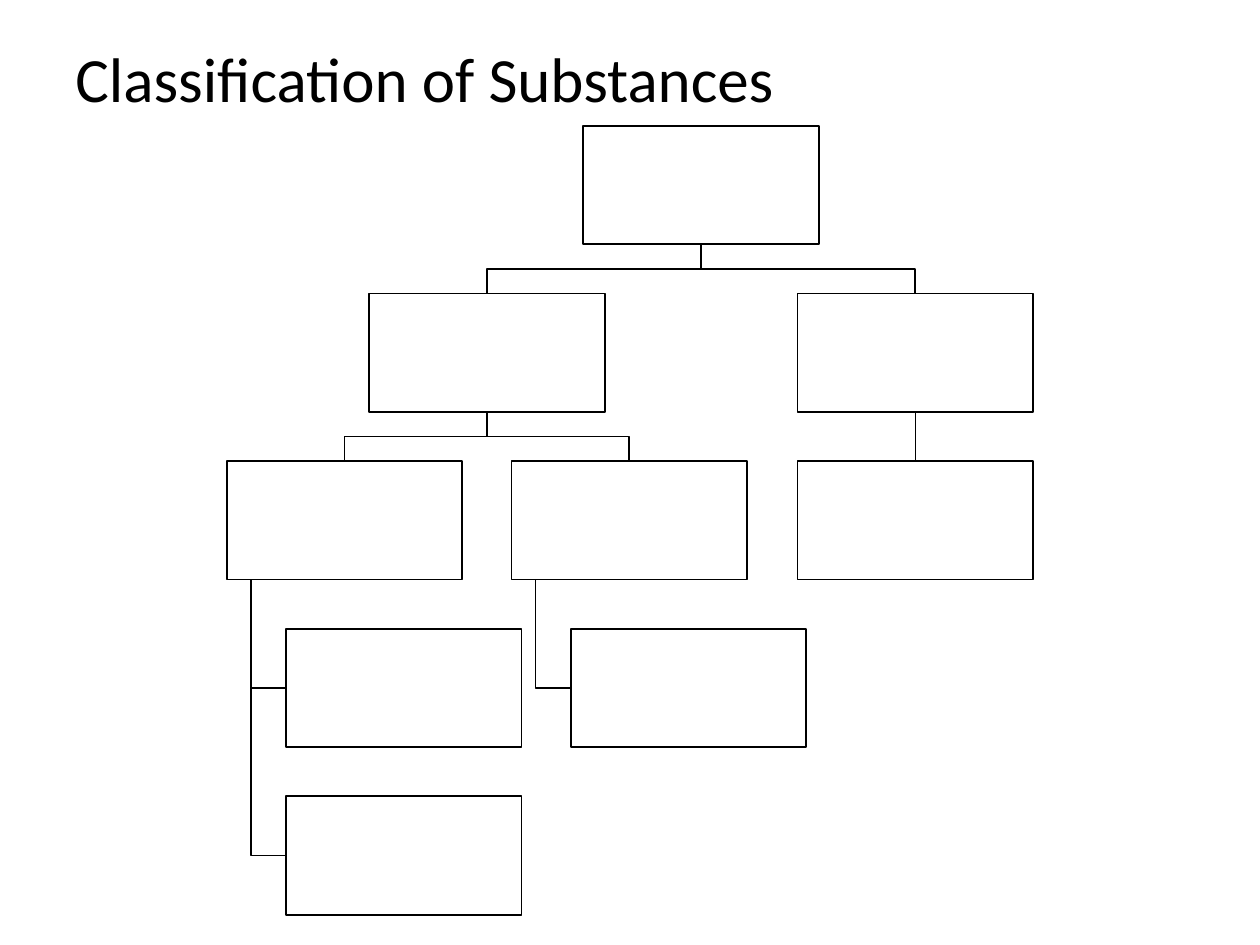
from lxml import etree
from pptx import Presentation
from pptx.dml.color import RGBColor
from pptx.enum.shapes import MSO_CONNECTOR, MSO_SHAPE
from pptx.enum.text import MSO_ANCHOR
from pptx.oxml.ns import qn
from pptx.util import Inches, Pt

RECTANGLE = MSO_SHAPE.RECTANGLE
STRAIGHT = MSO_CONNECTOR.STRAIGHT
MIDDLE = MSO_ANCHOR.MIDDLE
BLACK = RGBColor(0x00, 0x00, 0x00)
WHITE = RGBColor(0xFF, 0xFF, 0xFF)

BOX_WIDTH, BOX_HEIGHT = 1.87, 0.94
FIRST_TOP, ROW_PITCH = 1, 1.33
GAP = ROW_PITCH - BOX_HEIGHT
TRUNK_INDENT = 0.19

# Each box: left edge in inches and row
BOXES = {
    "root": (4.63, 0),
    "left branch": (2.93, 1),
    "right branch": (6.33, 1),
    "left group": (1.8, 2),
    "middle group": (4.06, 2),
    "right group": (6.33, 2),
    "left item 1": (2.27, 3),
    "left item 2": (2.27, 4),
    "middle item": (4.53, 3),
}
BRANCH_LINKS = [
    ("right branch", "right group"),
    ("root", "right branch"),
    ("left branch", "middle group"),
    ("left branch", "left group"),
    ("root", "left branch"),
]
HANGING_LINKS = [
    ("middle group", "middle item"),
    ("left group", "left item 2"),
    ("left group", "left item 1"),
]


def box_corner(name):
    left, row = BOXES[name]
    return left, FIRST_TOP + row * ROW_PITCH


def draw_link(points):
    """Draw an open black line through points given in inches."""
    corners = [(Inches(x), Inches(y)) for x, y in points]
    if len({x for x, y in corners}) == 1:
        link = page.shapes.add_connector(STRAIGHT, *corners[0], *corners[-1])
        etree.SubElement(link._element.spPr, qn("a:effectLst"))
    else:
        builder = page.shapes.build_freeform(*corners[0])
        builder.add_line_segments(corners[1:], close=False)
        link = builder.convert_to_shape()
        link.shadow.inherit = False
        link.fill.background()
    link.line.color.rgb = BLACK
    link.line.width = Pt(1)


deck = Presentation()
deck.slide_width, deck.slide_height = Inches(10), Inches(7.5)
page = deck.slides.add_slide(deck.slide_layouts[6])

title = page.shapes.add_textbox(Inches(0.5), Inches(0.3), Inches(9), Inches(0.7))
frame = title.text_frame
frame.word_wrap = True
frame.vertical_anchor = MIDDLE
frame.text = "Classification of Substances"
para = frame.paragraphs[0]
para.line_spacing = 0.9
para.font.name = "Calibri"
para.font.size = Pt(36)
para.font.color.rgb = BLACK

for parent, child in BRANCH_LINKS:
    parent_left, parent_top = box_corner(parent)
    child_left, child_top = box_corner(child)
    start_x = parent_left + BOX_WIDTH / 2
    end_x = child_left + BOX_WIDTH / 2
    middle_y = child_top - GAP / 2
    draw_link([(start_x, parent_top + BOX_HEIGHT), (start_x, middle_y),
               (end_x, middle_y), (end_x, child_top)])

for parent, child in HANGING_LINKS:
    parent_left, parent_top = box_corner(parent)
    child_left, child_top = box_corner(child)
    trunk_x = parent_left + TRUNK_INDENT
    child_y = child_top + BOX_HEIGHT / 2
    draw_link([(trunk_x, parent_top + BOX_HEIGHT), (trunk_x, child_y),
               (child_left, child_y)])

for name in BOXES:
    left, top = box_corner(name)
    box = page.shapes.add_shape(RECTANGLE, Inches(left), Inches(top),
                                Inches(BOX_WIDTH), Inches(BOX_HEIGHT))
    box.shadow.inherit = False
    box.fill.solid()
    box.fill.fore_color.rgb = WHITE
    box.line.color.rgb = BLACK
    box.line.width = Pt(1)

deck.save("out.pptx")
